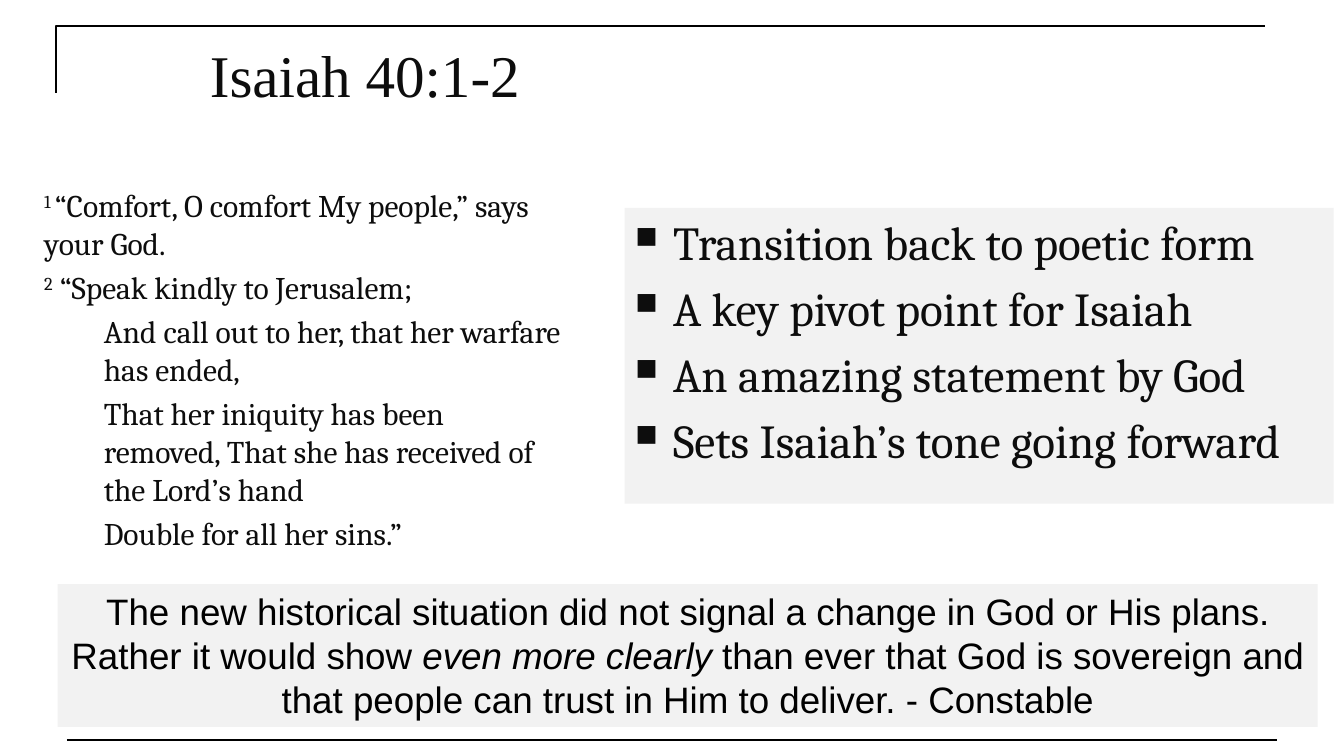
from dataclasses import dataclass

from lxml.etree import SubElement
from pptx import Presentation
from pptx.dml.color import RGBColor
from pptx.enum.shapes import MSO_CONNECTOR, MSO_SHAPE
from pptx.enum.text import MSO_ANCHOR, PP_ALIGN
from pptx.oxml.ns import qn
from pptx.util import Cm, Pt


@dataclass(frozen=True)
class Theme:
    ink: RGBColor = RGBColor(0x0D, 0x0D, 0x0D)
    black: RGBColor = RGBColor(0, 0, 0)
    panel: RGBColor = RGBColor(0xF2, 0xF2, 0xF2)
    title_font: str = "Times New Roman"
    body_font: str = "Cambria"
    quote_font: str = "Arial"
    title_size: int = 45
    verse_size: int = 24
    point_size: int = 36
    quote_size: int = 28
    rule_width: float = 1.5
    paragraph_gap: float = 0.2


THEME = Theme()

VERSES = [
    (0, [("1 ", True), ("“Comfort, O comfort My people,” says your God.", False)]),
    (0, [("2", True), (" “Speak kindly to Jerusalem;", False)]),
    (1.6, [("And call out to her, that her warfare has ended,", False)]),
    (1.6, [("That her iniquity has been removed, That she has received of the Lord’s hand", False)]),
    (1.6, [("Double for all her sins.”", False)]),
]

POINTS = [
    "Transition back to poetic form",
    "A key pivot point for Isaiah",
    "An amazing statement by God",
    "Sets Isaiah’s tone going forward",
]

QUOTE = [
    ("The new historical situation did not signal a change in God or His plans. "
     "Rather it would show ", False),
    ("even more clearly ", True),
    ("than ever that God is sovereign and that people can trust in Him to deliver. - Constable", False),
]


def apply(target, formats):
    for name, value in formats.items():
        setattr(target, name, value)


def set_frame(shape, anchor=MSO_ANCHOR.TOP, side=0.28):
    frame = shape.text_frame
    apply(frame, {
        "word_wrap": True,
        "vertical_anchor": anchor,
        "margin_left": Cm(side),
        "margin_right": Cm(side),
        "margin_top": Cm(0.13),
        "margin_bottom": Cm(0.13),
    })
    return frame


def add_text_box(slide, box, **frame_options):
    shape = slide.shapes.add_textbox(*map(Cm, box))
    return set_frame(shape, **frame_options)


def add_panel(slide, box, **frame_options):
    shape = slide.shapes.add_shape(MSO_SHAPE.RECTANGLE, *map(Cm, box))
    shape.shadow.inherit = False
    shape.fill.solid()
    shape.fill.fore_color.rgb = THEME.panel
    shape.line.fill.background()
    return set_frame(shape, **frame_options)


def add_paragraph(frame, index, size, alignment=PP_ALIGN.LEFT):
    paragraph = frame.add_paragraph() if index else frame.paragraphs[0]
    paragraph.alignment = alignment
    if index:
        paragraph.space_before = Pt(size * THEME.paragraph_gap)
    return paragraph


def add_run(paragraph, text, name, size, color, italic=False):
    run = paragraph.add_run()
    run.text = text
    apply(run.font, {"name": name, "size": Pt(size), "italic": italic})
    run.font.color.rgb = color
    return run


def indent(paragraph, left, first=0):
    properties = paragraph._p.get_or_add_pPr()
    properties.set("marL", str(Cm(left)))
    properties.set("indent", str(Cm(first)))
    return properties


def add_bullet(paragraph):
    properties = indent(paragraph, 1.02, -1.02)
    SubElement(properties, qn("a:buSzPct")).set("val", "65000")
    SubElement(properties, qn("a:buChar")).set("char", "■")


def format_rule(shape):
    shape.line.color.rgb = THEME.black
    shape.line.width = Pt(THEME.rule_width)


def draw_rules(slide, box):
    left, top, width, height = box
    corner_height, shift = 1.8, 0.3
    builder = slide.shapes.build_freeform(Cm(left), Cm(top + corner_height))
    builder.add_line_segments(
        [(Cm(left), Cm(top)), (Cm(left + width), Cm(top))], close=False)
    corner = builder.convert_to_shape()
    corner.shadow.inherit = False
    corner.fill.background()
    format_rule(corner)

    bottom = top + height
    rule = slide.shapes.add_connector(
        MSO_CONNECTOR.STRAIGHT, Cm(left + shift), Cm(bottom),
        Cm(left + shift + width), Cm(bottom))
    SubElement(rule._element.spPr, qn("a:effectLst"))
    format_rule(rule)


def draw_title(slide, box):
    frame = add_text_box(slide, box, anchor=MSO_ANCHOR.MIDDLE)
    paragraph = add_paragraph(frame, 0, THEME.title_size)
    add_run(paragraph, "Isaiah 40:1-2", THEME.title_font, THEME.title_size, THEME.ink)


def draw_verses(slide, box):
    frame = add_text_box(slide, box)
    for index, (left, pieces) in enumerate(VERSES):
        paragraph = add_paragraph(frame, index, THEME.verse_size)
        indent(paragraph, left)
        for text, raised in pieces:
            run = add_run(paragraph, text, THEME.body_font, THEME.verse_size, THEME.ink)
            if raised:
                run._r.get_or_add_rPr().set("baseline", "30000")


def draw_points(slide, box):
    frame = add_panel(slide, box)
    for index, text in enumerate(POINTS):
        paragraph = add_paragraph(frame, index, THEME.point_size)
        add_bullet(paragraph)
        add_run(paragraph, text, THEME.body_font, THEME.point_size, THEME.ink)


def draw_quote(slide, box):
    frame = add_panel(slide, box, side=0.25)
    paragraph = add_paragraph(frame, 0, THEME.quote_size, PP_ALIGN.CENTER)
    for text, italic in QUOTE:
        add_run(paragraph, text, THEME.quote_font, THEME.quote_size, THEME.black, italic)


def main():
    presentation = Presentation()
    apply(presentation, {"slide_width": Cm(36.12), "slide_height": Cm(20.32)})
    slide = presentation.slides.add_slide(presentation.slide_layouts[6])
    draw_rules(slide, (1.5, 0.69, 32.51, 19.2))
    draw_title(slide, (5.36, 0.81, 28.3, 2.36))
    draw_verses(slide, (0.91, 4.88, 14.43, 10.59))
    draw_points(slide, (16.79, 5.59, 19.05, 7.95))
    draw_quote(slide, (1.55, 15.7, 33.86, 3.84))
    presentation.save("out.pptx")


if __name__ == "__main__":
    main()
